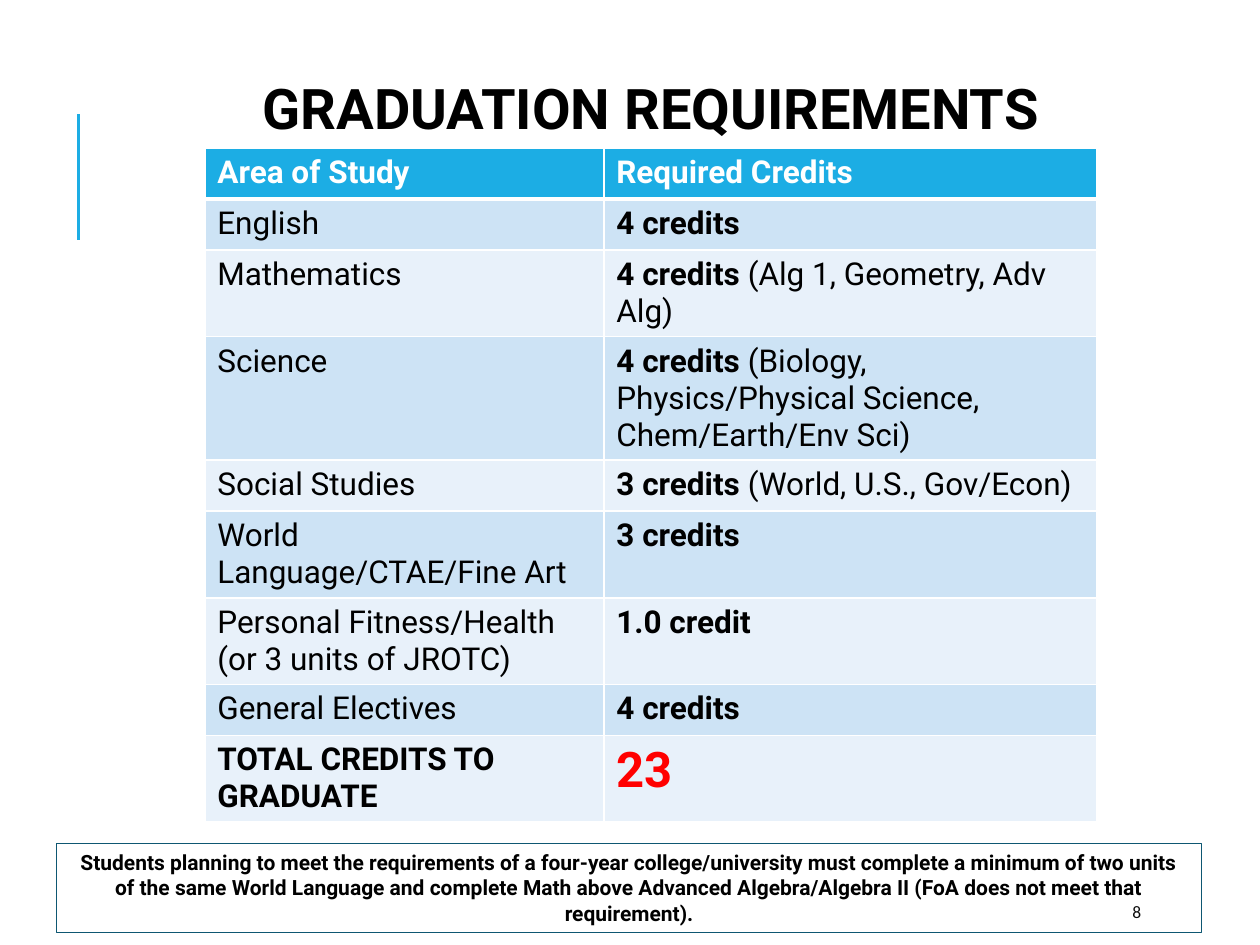
from lxml.etree import SubElement
from pptx import Presentation
from pptx.dml.color import RGBColor
from pptx.enum.shapes import MSO_CONNECTOR, MSO_SHAPE
from pptx.enum.text import MSO_ANCHOR as ANCHOR, MSO_AUTO_SIZE as AUTOSIZE, PP_ALIGN as ALIGN
from pptx.oxml.ns import qn
from pptx.util import Pt

COLORS = {
    "accent": "1CADE4", "white": "FFFFFF", "black": "000000", "red": "FF0000",
    "band_dark": "CDE3F5", "band_light": "E8F1FA", "outline": "0E5772", "number": "0D0D0D",
}
BODY = {"name": "Roboto", "size": Pt(18), "bold": False, "color": "black"}
BOLD = {**BODY, "bold": True}
HEADER = {**BOLD, "color": "white"}
TOTAL = {**BOLD, "size": Pt(28), "color": "red"}
TITLE = {**BOLD, "size": Pt(32)}
NOTE = {**BOLD, "size": Pt(12)}
NUMBER = {"name": "Calibri", "size": Pt(10), "bold": False, "color": "number"}

# Area, credits, courses
REQUIREMENTS = [
    ("English", "4 credits", ""),
    ("Mathematics", "4 credits", "(Alg 1, Geometry, Adv Alg)"),
    ("Science", "4 credits", "(Biology, Physics/Physical Science, Chem/Earth/Env Sci)"),
    ("Social Studies", "3 credits", "(World, U.S., Gov/Econ)"),
    ("World Language/CTAE/Fine Art", "3 credits", ""),
    ("Personal Fitness/Health (or 3 units of JROTC)", "1.0 credit", ""),
    ("General Electives", "4 credits", ""),
]
NOTE_TEXT = (
    "Students planning to meet the requirements of a four-year college/university must "
    "complete a minimum of two units of the same World Language and complete Math above "
    "Advanced Algebra/Algebra II (FoA does not meet that requirement)."
)


def rgb(name):
    return RGBColor.from_string(COLORS[name])


def add_run(p, text, style):
    r = p.add_run()
    r.text = text
    for key, value in style.items():
        if key == "color":
            r.font.color.rgb = rgb(value)
        else:
            setattr(r.font, key, value)


def set_text(tf, text, style, align=ALIGN.LEFT, anchor=ANCHOR.TOP):
    tf.word_wrap = True
    tf.vertical_anchor = anchor
    p = tf.paragraphs[0]
    p.alignment = align
    add_run(p, text, style)
    return p


def add_accent_line(slide, x, top, bottom):
    line = slide.shapes.add_connector(MSO_CONNECTOR.STRAIGHT, x, bottom, x, top)
    line.line.color.rgb = rgb("accent")
    line.line.width = Pt(1.5)
    SubElement(line._element.spPr, qn("a:effectLst"))


def add_title(slide, text, *box):
    sp = slide.shapes.title
    sp.left, sp.top, sp.width, sp.height = box
    sp.text_frame.auto_size = AUTOSIZE.NONE
    p = set_text(sp.text_frame, text, TITLE, ALIGN.CENTER)
    p.line_spacing = 0.9


def set_borders(cell, top=1, bottom=1):
    """Draw white borders; top and bottom are widths in points."""
    tc_pr = cell._tc.get_or_add_tcPr()
    for side, width in {"L": 1, "R": 1, "T": top, "B": bottom}.items():
        ln = SubElement(tc_pr, qn(f"a:ln{side}"), w=str(Pt(width)))
        fill = SubElement(ln, qn("a:solidFill"))
        SubElement(fill, qn("a:srgbClr"), val=COLORS["white"])


def add_credit_table(slide, left, top, widths, row_height):
    rows = [([("Area of Study", HEADER)], [("Required Credits", HEADER)])]
    for area, credit, courses in REQUIREMENTS:
        runs = [(credit + " ", BOLD), (courses, BODY)] if courses else [(credit, BOLD)]
        rows.append(([(area, BODY)], runs))
    rows.append(([("TOTAL CREDITS TO GRADUATE", BOLD)], [("23", TOTAL)]))

    table = slide.shapes.add_table(len(rows), len(widths), left, top,
                                   sum(widths), row_height * len(rows)).table
    for column, width in zip(table.columns, widths):
        column.width = width
    for i, row in enumerate(rows):
        table.rows[i].height = row_height
        band = "accent" if i == 0 else "band_dark" if i % 2 else "band_light"
        for j, runs in enumerate(row):
            cell = table.cell(i, j)
            set_borders(cell, top=3 if i == 1 else 1, bottom=3 if i == 0 else 1)
            cell.fill.solid()
            cell.fill.fore_color.rgb = rgb(band)
            for text, style in runs:
                add_run(cell.text_frame.paragraphs[0], text, style)


def add_note(slide, text, *box):
    sp = slide.shapes.add_shape(MSO_SHAPE.RECTANGLE, *box)
    sp.shadow.inherit = False
    sp.fill.background()
    sp.line.color.rgb = rgb("outline")
    sp.line.width = Pt(0.75)
    sp.text_frame.auto_size = AUTOSIZE.SHAPE_TO_FIT_TEXT
    set_text(sp.text_frame, text, NOTE, ALIGN.CENTER)


def add_page_number(slide, text, *box):
    sp = slide.shapes.add_textbox(*box)
    set_text(sp.text_frame, text, NUMBER, anchor=ANCHOR.MIDDLE)


def main():
    prs = Presentation()
    prs.slide_width, prs.slide_height = Pt(720), Pt(540)
    slide = prs.slides.add_slide(prs.slide_layouts[5])
    add_accent_line(slide, Pt(45), Pt(65), Pt(137))
    add_credit_table(slide, Pt(117), Pt(84.5), [Pt(228), Pt(282)], Pt(29.2))
    add_title(slide, "GRADUATION REQUIREMENTS", Pt(90), Pt(42.5), Pt(564), Pt(83))
    add_note(slide, NOTE_TEXT, Pt(32.5), Pt(482), Pt(654), Pt(51))
    add_page_number(slide, "8", Pt(640), Pt(510), Pt(57.5), Pt(21.5))
    prs.save("out.pptx")


if __name__ == "__main__":
    main()
